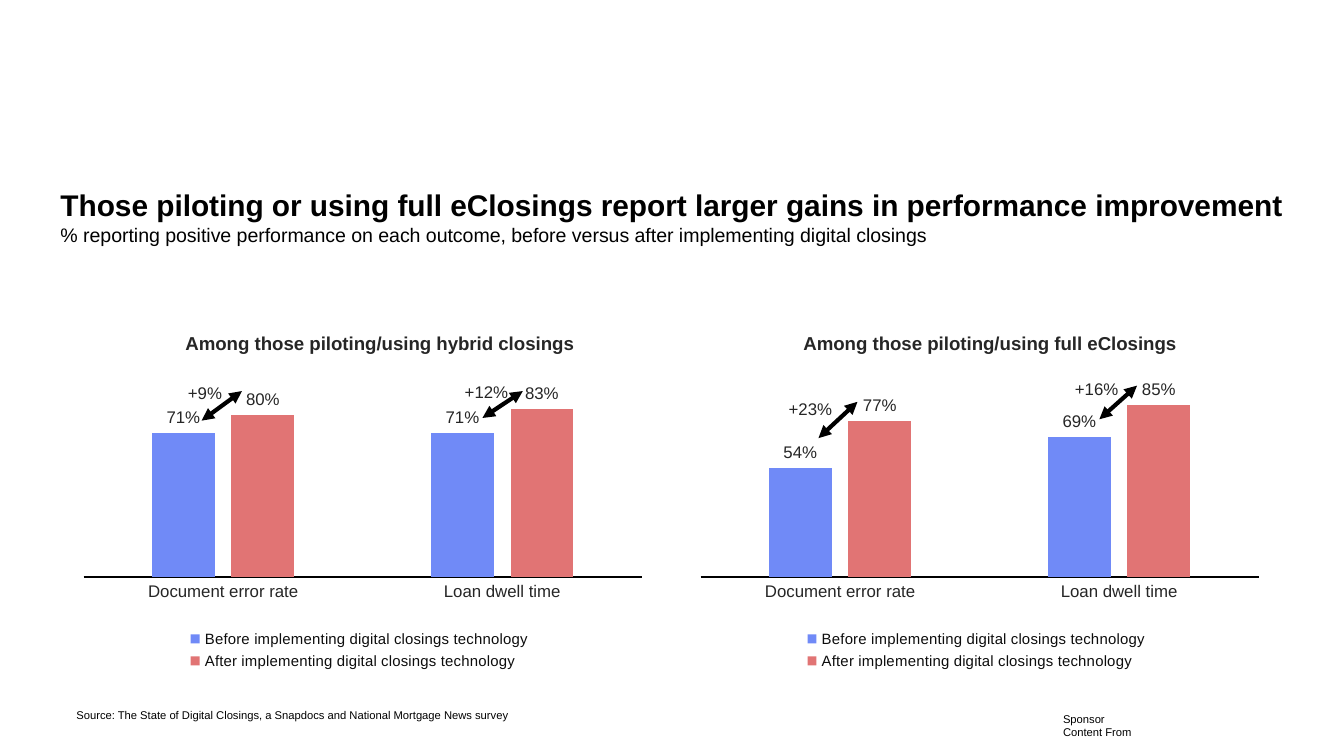
"""Build a slide comparing performance gains from hybrid and full eClosings."""
import lxml.etree
import pptx
import pptx.chart.data
import pptx.dml.color
import pptx.enum.chart
import pptx.enum.shapes
import pptx.enum.text
import pptx.oxml
import pptx.oxml.ns
import pptx.util

Inches = pptx.util.Inches
Pt = pptx.util.Pt
qn = pptx.oxml.ns.qn
rgb = pptx.dml.color.RGBColor.from_string
PP = pptx.enum.text.PP_ALIGN


def style(font, size, color, bold=False):
    """Set the face, size, colour and weight of a font."""
    font.name = "Arial"
    font.size = Pt(size)
    font.bold = bold
    font.color.rgb = rgb(color)


def add_text(s, text, box, size, color, bold=False, align=PP.LEFT, wrap=False):
    """Add a one-paragraph text box and return its text frame."""
    tf = s.shapes.add_textbox(*[Inches(v) for v in box]).text_frame
    tf.word_wrap = wrap
    p = tf.paragraphs[0]
    p.text = text
    p.alignment = align
    for r in p.runs:
        style(r.font, size, color, bold)
    return tf


prs = pptx.Presentation()
prs.slide_width = Inches(10)
prs.slide_height = Inches(5.625)
s = prs.slides.add_slide(prs.slide_layouts[5])

title = s.shapes.title
title.left, title.top = Inches(0.35), Inches(1.34)
title.width, title.height = Inches(9.65), Inches(0.93)
tf = title.text_frame
tf.text = (
    "Those piloting or using full eClosings report larger gains in performance improvement\n"
    "% reporting positive performance on each outcome, before versus after implementing digital closings"
)
tf.word_wrap = True
tf.auto_size = pptx.enum.text.MSO_AUTO_SIZE.NONE
tf.vertical_anchor = pptx.enum.text.MSO_ANCHOR.TOP
for p, size, bold in zip(tf.paragraphs, (16, 10.5), (True, False)):
    p.alignment = PP.LEFT
    style(p.runs[0].font, size, "000000", bold)

tf = add_text(s, "Sponsor \vContent From", (7.91, 5.3, 1.17, 0.2), 6, "000000", wrap=True)
tf.margin_left = tf.margin_top = tf.margin_right = tf.margin_bottom = 0
add_text(s, "Source: The State of Digital Closings, a Snapdocs and National Mortgage News survey",
         (0.47, 5.22, 3.46, 0.2), 6, "000000")

colors = ("708AF7", "E17474")
panels = [
    (0.58, "Among those piloting/using hybrid closings", (1.26, 2.42, 3.13, 0.27),
     (0.71, 0.71), (0.8, 0.83)),
    (5.17, "Among those piloting/using full eClosings", (5.86, 2.42, 3.01, 0.27),
     (0.54, 0.69), (0.77, 0.85)),
]
for left, heading, box, before, after in panels:
    data = pptx.chart.data.CategoryChartData(number_format="0%")
    data.categories = ["Document error rate", "Loan dwell time"]
    data.add_series("Before implementing digital closings technology", before)
    data.add_series("After implementing digital closings technology", after)
    chart = s.shapes.add_chart(
        pptx.enum.chart.XL_CHART_TYPE.COLUMN_CLUSTERED,
        Inches(left), Inches(2.71), Inches(4.2), Inches(2.43), data).chart
    style(chart.font, 10, "000000")
    chart.has_title = False
    chart.has_legend = True
    chart.legend.position = pptx.enum.chart.XL_LEGEND_POSITION.BOTTOM
    chart.legend.include_in_layout = False
    style(chart.legend.font, 8, "0D0D0D")

    axis = chart.category_axis
    axis.major_tick_mark = pptx.enum.chart.XL_TICK_MARK.NONE
    axis.format.line.width = Pt(0.75)
    axis.format.line.color.rgb = rgb("000000")
    style(axis.tick_labels.font, 9, "262626")
    axis = chart.value_axis
    axis.minimum_scale, axis.maximum_scale = 0, 1
    axis.has_major_gridlines = False
    axis.visible = False

    plot = chart.plots[0]
    plot.gap_width, plot.overlap = 219, -27
    plot.vary_by_categories = False
    for series, color in zip(plot.series, colors):
        series.format.fill.solid()
        series.format.fill.fore_color.rgb = rgb(color)
        labels = series.data_labels
        labels.show_value = True
        labels.number_format = "0%"
        labels.number_format_is_linked = False
        labels.position = pptx.enum.chart.XL_LABEL_POSITION.OUTSIDE_END
        style(labels.font, 9, "262626")

    plot_area = chart._chartSpace.chart.plotArea
    legend = chart._chartSpace.chart.find(qn("c:legend"))
    for part, index, frame in ((plot_area, 0, (0.01, 0.032, 0.99, 0.62)),
                               (legend, 1, (0.19, 0.8, 0.62, 0.15))):
        for old in part.findall(qn("c:layout")):
            part.remove(old)
        layout = lxml.etree.Element(qn("c:layout"))
        manual = lxml.etree.SubElement(layout, qn("c:manualLayout"))
        if part is plot_area:
            lxml.etree.SubElement(manual, qn("c:layoutTarget")).set("val", "inner")
        for tag, val in zip(("xMode", "yMode", "x", "y", "w", "h"), ("edge", "edge") + frame):
            lxml.etree.SubElement(manual, qn("c:" + tag)).set("val", str(val))
        part.insert(index, layout)
    add_text(s, heading, box, 10, "262626", True, PP.CENTER)

gains = [
    ("+23%", (5.77, 2.92, 0.53, 0.25), (6.09, 3.26, 6.38, 2.99)),
    ("+16%", (7.9, 2.77, 0.53, 0.25), (8.18, 3.12, 8.46, 2.87)),
    ("+12%", (3.36, 2.79, 0.53, 0.25), (3.59, 3.11, 3.89, 2.91)),
    ("+9%", (1.3, 2.8, 0.46, 0.25), (1.5, 3.13, 1.8, 2.91)),
]
for text, box, ends in gains:
    sp = s.shapes.add_connector(pptx.enum.shapes.MSO_CONNECTOR.STRAIGHT,
                                *[Inches(v) for v in ends])
    sp.line.width = Pt(2.25)
    sp.line.color.rgb = rgb("000000")
    ln = sp.line._get_or_add_ln()
    for tag in ("a:headEnd", "a:tailEnd"):
        lxml.etree.SubElement(ln, qn(tag)).set("type", "triangle")
    lxml.etree.SubElement(sp._element.spPr, qn("a:effectLst"))
    add_text(s, text, box, 9, "262626")

prs.save("out.pptx")
